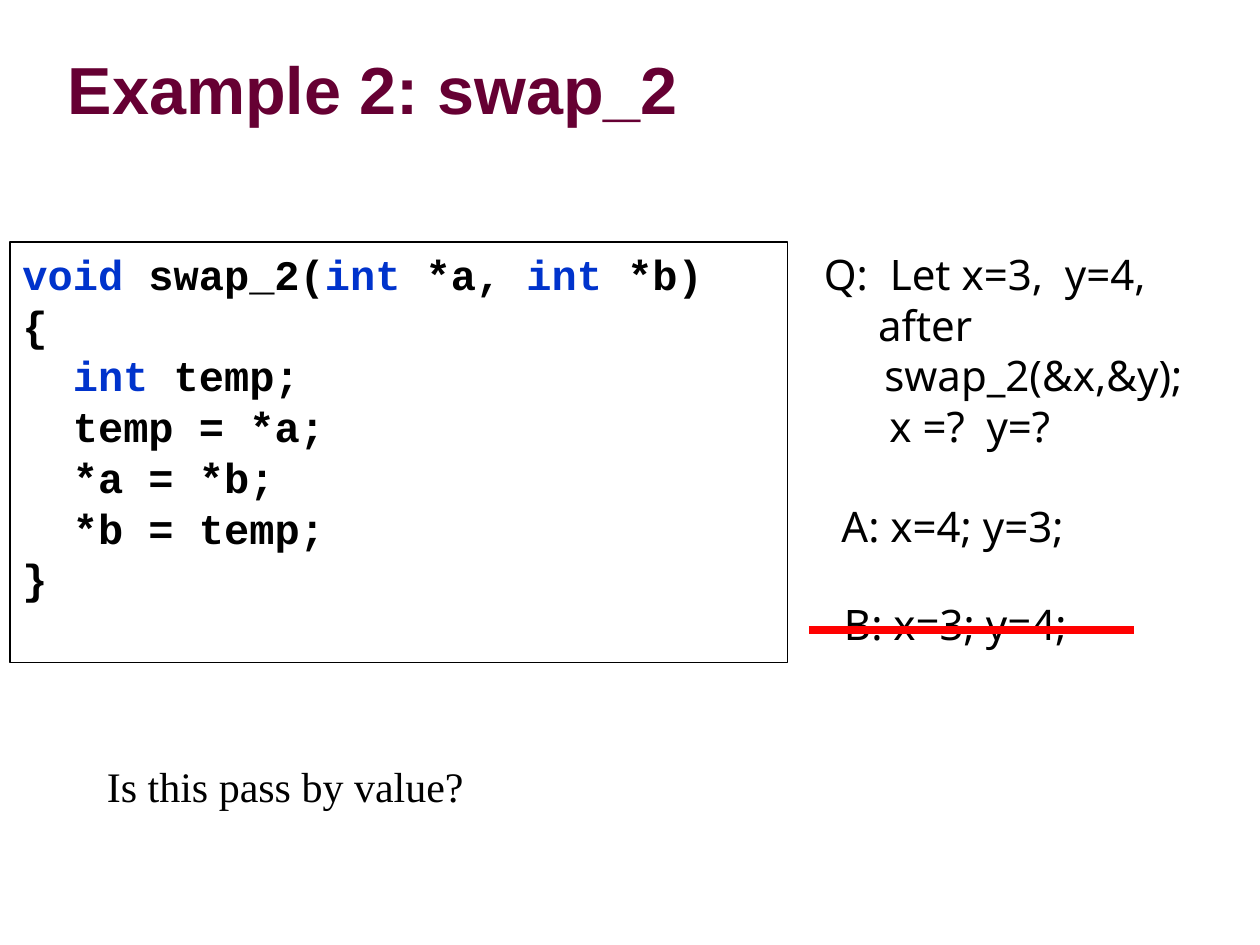
from pptx import Presentation
from pptx.dml.color import RGBColor
from pptx.enum.shapes import MSO_CONNECTOR, MSO_SHAPE
from pptx.enum.text import MSO_ANCHOR, PP_ALIGN
from pptx.oxml.xmlchemy import OxmlElement
from pptx.util import Inches, Pt

RECTANGLE = MSO_SHAPE.RECTANGLE
STRAIGHT = MSO_CONNECTOR.STRAIGHT
TOP, MIDDLE = MSO_ANCHOR.TOP, MSO_ANCHOR.MIDDLE
LEFT = PP_ALIGN.LEFT

COLORS = {"title": "660033", "keyword": "0033CC", "text": "000000", "strike": "FF0000"}
KEYWORDS = ("void", "int")
CODE = """void swap_2(int *a, int *b)
{
  int temp;
  temp = *a;
  *a = *b;
  *b = temp;
}"""


def color(name):
    return RGBColor.from_string(COLORS[name])


class SlideBuilder:
    """Holds the text style and the page being built."""

    size = 24
    line_pitch = 29

    def __init__(self, page):
        self.page = page

    def style(self, para, font, size=None, tint="text", bold=False, pitch=None):
        para.alignment = LEFT
        para.font.name = font
        para.font.size = Pt(size or self.size)
        para.font.bold = bold
        para.font.color.rgb = color(tint)
        if pitch:
            para.line_spacing = Pt(pitch)

    def text(self, bounds, lines, font, wrap=True, anchor=TOP, indents=(), **style):
        box = self.page.shapes.add_textbox(*map(Inches, bounds))
        frame = box.text_frame
        frame.word_wrap = wrap
        frame.vertical_anchor = anchor
        frame.text = "\n".join(lines)
        for para in frame.paragraphs:
            self.style(para, font, **style)
        for para, (margin, first) in zip(frame.paragraphs, indents):
            properties = para._p.get_or_add_pPr()
            properties.set("marL", str(Inches(margin)))
            properties.set("indent", str(Inches(first)))

    def code(self, bounds, source):
        box = self.page.shapes.add_shape(RECTANGLE, *map(Inches, bounds))
        box.shadow.inherit = False
        box.fill.background()
        box.line.color.rgb = color("text")
        box.line.width = Pt(0.75)
        frame = box.text_frame
        frame.word_wrap = True
        frame.vertical_anchor = TOP
        for number, line in enumerate(source.split("\n")):
            para = frame.paragraphs[0] if number == 0 else frame.add_paragraph()
            self.style(para, "Courier New", bold=True, pitch=self.line_pitch)
            self.highlight(para, line)

    def highlight(self, para, line):
        # Split around each keyword so that it gets its own colour
        for word in KEYWORDS:
            line = line.replace(word, f"|{word}|")
        for part in filter(None, line.split("|")):
            span = para.add_run()
            span.text = part
            span.font.color.rgb = color("keyword" if part in KEYWORDS else "text")

    def strike(self, start, end):
        line = self.page.shapes.add_connector(STRAIGHT, *map(Inches, start + end))
        line.line.color.rgb = color("strike")
        line.line.width = Pt(4.5)
        line._element.spPr.append(OxmlElement("a:effectLst"))


def main():
    deck = Presentation()
    deck.slide_width, deck.slide_height = Inches(10), Inches(7.5)
    builder = SlideBuilder(deck.slides.add_slide(deck.slide_layouts[6]))

    # Title and code
    builder.text((0.44, 0.33, 9.53, 0.74), ["Example 2: swap_2"], "Arial",
                 anchor=MIDDLE, size=38, tint="title", bold=True)
    builder.code((0.08, 1.92, 6.17, 3.34), CODE)

    # Question with hanging lines
    question = ["Q:  Let x=3,  y=4,", "after swap_2(&x,&y);", "x =?  y=?"]
    builder.text((6.42, 1.92, 3.58, 1.7), question, "Noto Sans",
                 indents=[(0.5, -0.48), (0.5, -0.05), (0.54, 0)],
                 pitch=builder.line_pitch)

    # Answers, the wrong one struck out
    answers = [((6.58, 3.92, 2.2, 0.51), "A: x=4; y=3;"),
               ((6.6, 4.7, 2.16, 0.51), "B: x=3; y=4;")]
    for bounds, answer in answers:
        builder.text(bounds, [answer], "Noto Sans", wrap=False, pitch=builder.line_pitch)
    builder.strike((6.42, 5), (9, 5))

    # Closing question
    builder.text((0.75, 5.99, 3.06, 0.5), ["Is this pass by value?"],
                 "Times New Roman", wrap=False)

    deck.save("out.pptx")


if __name__ == "__main__":
    main()
